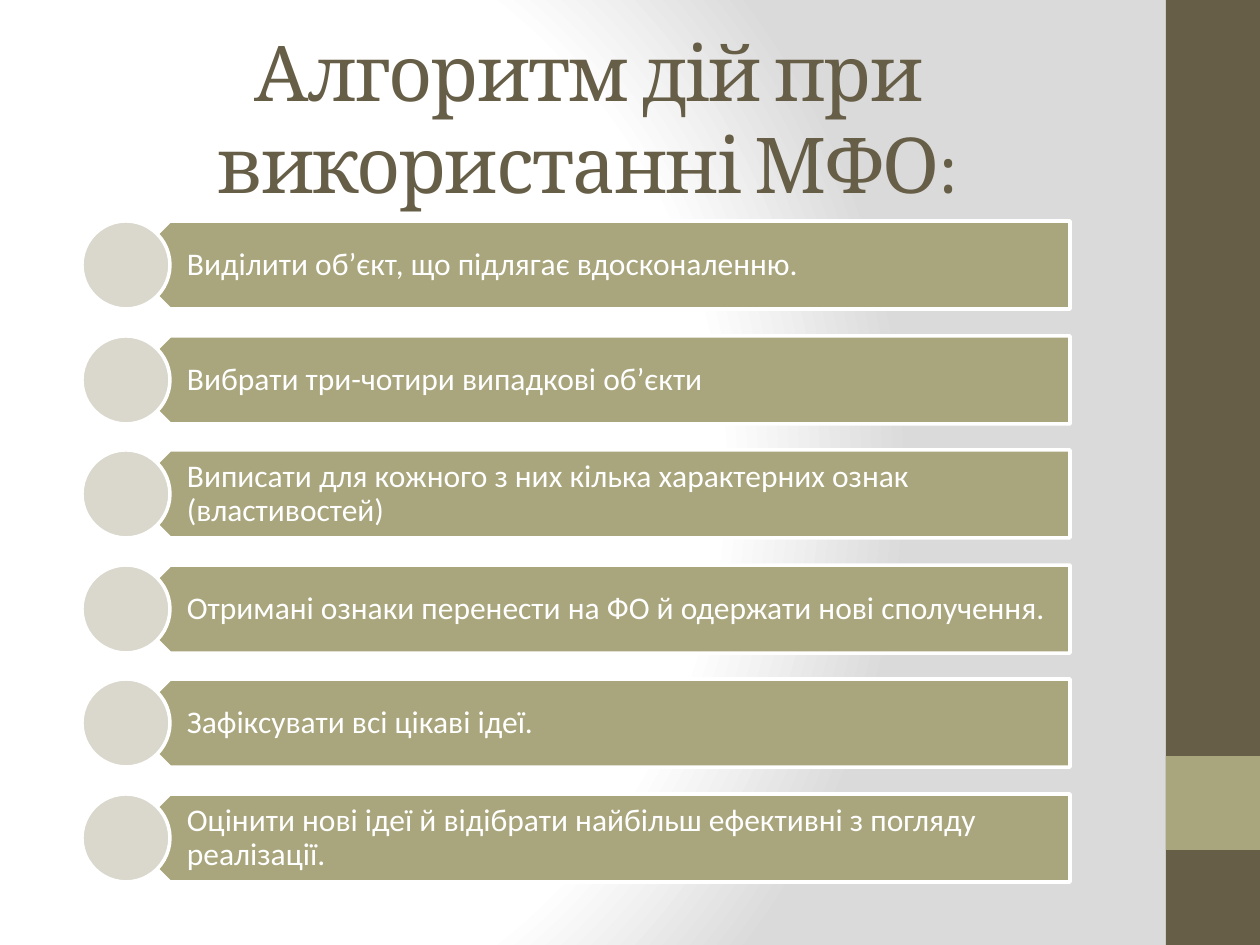
import pptx
import pptx.dml.color
import pptx.enum.shapes
import pptx.enum.text
import pptx.oxml
import pptx.oxml.ns
import pptx.util

RGBColor = pptx.dml.color.RGBColor
MSO_SHAPE = pptx.enum.shapes.MSO_SHAPE
MSO_ANCHOR = pptx.enum.text.MSO_ANCHOR
PP_ALIGN = pptx.enum.text.PP_ALIGN

BROWN = RGBColor(0x67, 0x5E, 0x47)
OLIVE = RGBColor(0xA9, 0xA5, 0x7C)
STONE = RGBColor(0xDA, 0xD8, 0xCC)
WHITE = RGBColor(0xFF, 0xFF, 0xFF)
GREY = RGBColor(0xDA, 0xDA, 0xDA)

PX_PER_INCH = 126
STEPS = [
    "Виділити об’єкт, що підлягає вдосконаленню.",
    "Вибрати три-чотири випадкові об’єкти",
    "Виписати для кожного з них кілька характерних ознак (властивостей)",
    "Отримані ознаки перенести на ФО й одержати нові сполучення.",
    "Зафіксувати всі цікаві ідеї.",
    "Оцінити нові ідеї й відібрати найбільш ефективні з погляду реалізації.",
]


def px(*lengths):
    return [pptx.util.Inches(length / PX_PER_INCH) for length in lengths]


def add_filled(shapes, kind, box, color, outlined=False):
    """Add a shadowless preset shape, with a white outline if asked."""
    shape = shapes.add_shape(kind, *px(*box))
    shape.shadow.inherit = False
    shape.fill.solid()
    shape.fill.fore_color.rgb = color
    if outlined:
        shape.line.color.rgb = WHITE
        shape.line.width = pptx.util.Pt(2)
    else:
        shape.line.fill.background()
    return shape


presentation = pptx.Presentation()
presentation.slide_width, presentation.slide_height = px(1260, 945)
slide = presentation.slides.add_slide(presentation.slide_layouts[5])

# Background: white glow on the left fading to grey
slide.background.fill.gradient()
gradient = slide.element.find(".//" + pptx.oxml.ns.qn("a:gradFill"))
stops = "".join(
    f'<a:gs pos="{position}"><a:srgbClr val="{color}"/></a:gs>'
    for position, color in [(0, WHITE), (75000, WHITE), (100000, GREY)]
)
gradient.getparent().replace(gradient, pptx.oxml.parse_xml(
    f'<a:gradFill {pptx.oxml.ns.nsdecls("a")} rotWithShape="1"><a:gsLst>{stops}</a:gsLst>'
    '<a:path path="circle"><a:fillToRect l="20000" t="50000" r="100000" b="50000"/>'
    '</a:path></a:gradFill>'
))

# Side band
add_filled(slide.shapes, MSO_SHAPE.RECTANGLE, (1166, 0, 94, 945), BROWN)
add_filled(slide.shapes, MSO_SHAPE.RECTANGLE, (1166, 756, 94, 94), OLIVE)

# Title
title = slide.shapes.title
title.left, title.top, title.width, title.height = px(63, 38, 1050, 157)
frame = title.text_frame
frame.text = "Алгоритм дій при використанні МФО:"
frame.word_wrap = True
frame.auto_size = pptx.enum.text.MSO_AUTO_SIZE.NONE
frame.vertical_anchor = MSO_ANCHOR.MIDDLE
paragraph = frame.paragraphs[0]
paragraph.alignment = PP_ALIGN.CENTER
run = paragraph.runs[0]
run.font.name = "Cambria"
run.font.size = pptx.util.Pt(44)
run.font.color.rgb = BROWN
run.font._element.set("spc", "-100")

# Steps: a left-pointing bar, its text and a circle over the point
ROW_TOP, ROW_HEIGHT = 221, 88
ROW_PITCH = 114.6
steps_group = slide.shapes.add_group_shape()
for index, step in enumerate(STEPS):
    top = round(ROW_TOP + index * ROW_PITCH)
    bar = add_filled(steps_group.shapes, MSO_SHAPE.PENTAGON,
                     (126, top, 944, ROW_HEIGHT), OLIVE, outlined=True)
    bar.rotation = 180

    label = steps_group.shapes.add_textbox(*px(148, top, 921, ROW_HEIGHT))
    frame = label.text_frame
    frame.text = step
    frame.word_wrap = True
    frame.vertical_anchor = MSO_ANCHOR.MIDDLE
    (frame.margin_left, frame.margin_top,
     frame.margin_right, frame.margin_bottom) = px(39, 9, 18, 9)
    paragraph = frame.paragraphs[0]
    paragraph.alignment = PP_ALIGN.LEFT
    paragraph.line_spacing = 0.9
    run = paragraph.runs[0]
    run.font.name = "Calibri"
    run.font.size = pptx.util.Pt(18)
    run.font.color.rgb = WHITE

    add_filled(steps_group.shapes, MSO_SHAPE.OVAL,
               (82, top, ROW_HEIGHT, ROW_HEIGHT), STONE, outlined=True)

presentation.save("out.pptx")
